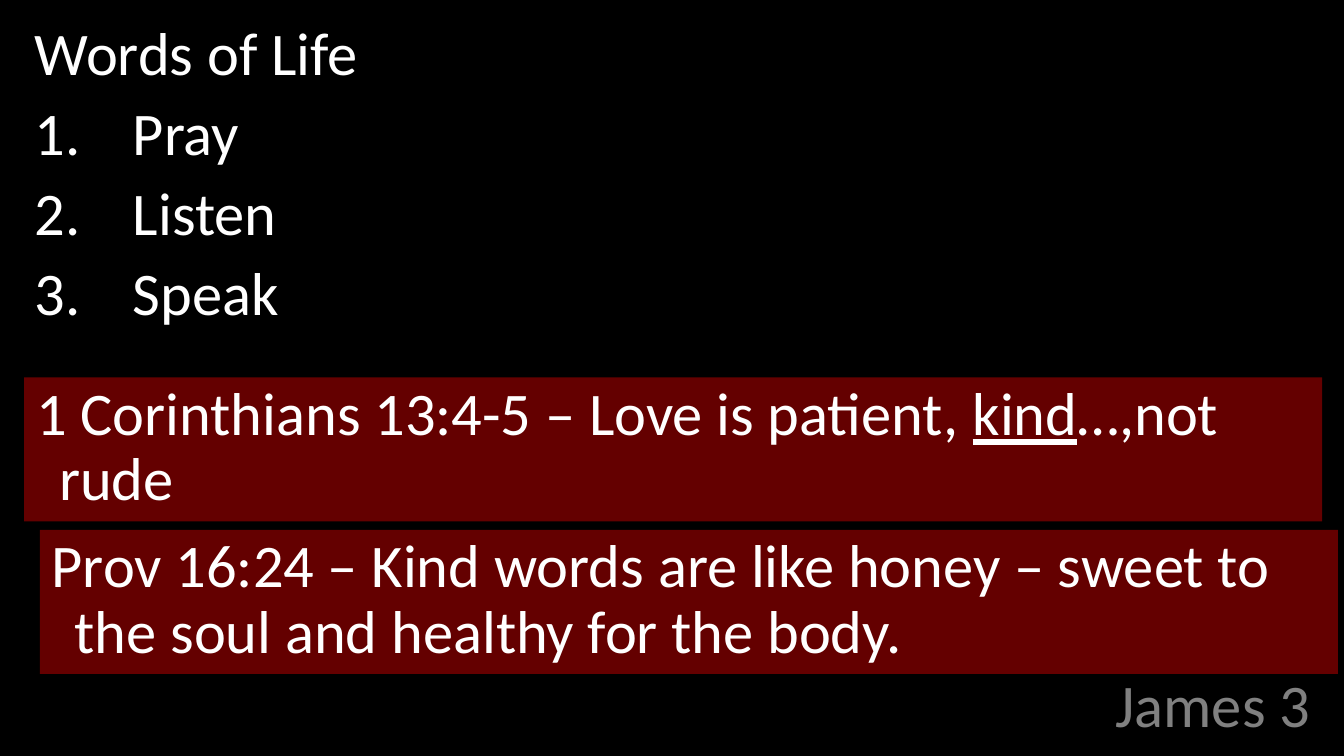
from dataclasses import dataclass

from lxml.etree import SubElement
from pptx import Presentation
from pptx.dml.color import RGBColor
from pptx.enum.shapes import MSO_SHAPE
from pptx.enum.text import MSO_ANCHOR, MSO_AUTO_SIZE, PP_ALIGN
from pptx.oxml.ns import qn
from pptx.slide import Slide
from pptx.text.text import TextFrame, _Paragraph
from pptx.util import Inches, Pt

BLACK = RGBColor(0x00, 0x00, 0x00)
WHITE = RGBColor(0xFF, 0xFF, 0xFF)
GRAY = RGBColor(0x80, 0x80, 0x80)
DARK_RED = RGBColor(0x64, 0x00, 0x00)

FONT_FORMAT = {"name": "Calibri", "size": Pt(36), "bold": False}
FRAME_FORMAT = {
    "word_wrap": True,
    "auto_size": MSO_AUTO_SIZE.NONE,
    "margin_left": Inches(0.1),
    "margin_right": Inches(0.1),
    "margin_top": Inches(0.05),
    "margin_bottom": Inches(0.05),
}


@dataclass
class Point:
    text: str
    indent: float = 0.81
    numbered: bool = True


@dataclass
class Verse:
    left: float
    top: float
    runs: list[tuple[str, bool]]


POINTS = [
    Point("Words of Life", 0.38, False),
    Point("Pray"),
    Point("Listen"),
    Point("Speak"),
]
VERSES = [
    Verse(0.2, 3.12, [
        ("1 Corinthians 13:4-5 – Love is patient, ", False),
        ("kind", True),
        ("…,not rude", False),
    ]),
    Verse(0.33, 4.38, [
        ("Prov 16:24 – Kind words are like honey – sweet to the soul and healthy for the body.", False),
    ]),
]


def format_frame(frame: TextFrame, anchor: MSO_ANCHOR) -> None:
    for name, value in FRAME_FORMAT.items():
        setattr(frame, name, value)
    frame.vertical_anchor = anchor


def add_text(paragraph: _Paragraph, text: str, color: RGBColor, underline: bool = False) -> None:
    run = paragraph.add_run()
    run.text = text
    for name, value in FONT_FORMAT.items():
        setattr(run.font, name, value)
    run.font.color.rgb = color
    if underline:
        run.font.underline = True


def set_hanging_indent(paragraph: _Paragraph, inches: float) -> None:
    properties = paragraph._p.get_or_add_pPr()
    properties.set("marL", str(Inches(inches)))
    properties.set("indent", str(-Inches(inches)))


def add_title(slide: Slide, text: str) -> None:
    title = slide.shapes.title
    title.left, title.top = Inches(7.06), Inches(5.56)
    title.width, title.height = Inches(3.87), Inches(0.6)
    format_frame(title.text_frame, MSO_ANCHOR.BOTTOM)
    paragraph = title.text_frame.paragraphs[0]
    paragraph.alignment = PP_ALIGN.RIGHT
    paragraph.line_spacing = 0.8
    add_text(paragraph, text, GRAY)


def add_points(slide: Slide, points: list[Point]) -> None:
    box = slide.shapes.add_textbox(Inches(0.19), Inches(0.12), Inches(10.74), Inches(5.29))
    frame = box.text_frame
    format_frame(frame, MSO_ANCHOR.TOP)
    for index, point in enumerate(points):
        paragraph = frame.add_paragraph() if index else frame.paragraphs[0]
        paragraph.line_spacing = 0.95
        paragraph.space_before = Pt(6.5 if index else 0)
        set_hanging_indent(paragraph, point.indent)
        if point.numbered:
            SubElement(paragraph._p.pPr, qn("a:buAutoNum"), type="arabicPeriod")
        add_text(paragraph, point.text, WHITE)


def add_verse(slide: Slide, verse: Verse) -> None:
    shape = slide.shapes.add_shape(
        MSO_SHAPE.ROUNDED_RECTANGLE,
        Inches(verse.left), Inches(verse.top), Inches(10.73), Inches(1.19),
    )
    shape.adjustments[0] = 0
    shape.shadow.inherit = False
    shape.fill.solid()
    shape.fill.fore_color.rgb = DARK_RED
    shape.line.fill.background()
    format_frame(shape.text_frame, MSO_ANCHOR.TOP)
    paragraph = shape.text_frame.paragraphs[0]
    paragraph.alignment = PP_ALIGN.LEFT
    paragraph.line_spacing = 0.9
    set_hanging_indent(paragraph, 0.19)
    for text, underline in verse.runs:
        add_text(paragraph, text, WHITE, underline)


def main() -> None:
    presentation = Presentation()
    presentation.slide_width = Inches(11.11)
    presentation.slide_height = Inches(6.25)
    slide = presentation.slides.add_slide(presentation.slide_layouts[5])
    slide.background.fill.solid()
    slide.background.fill.fore_color.rgb = BLACK
    add_title(slide, "James 3")
    add_points(slide, POINTS)
    for verse in VERSES:
        add_verse(slide, verse)
    presentation.save("out.pptx")


if __name__ == "__main__":
    main()
